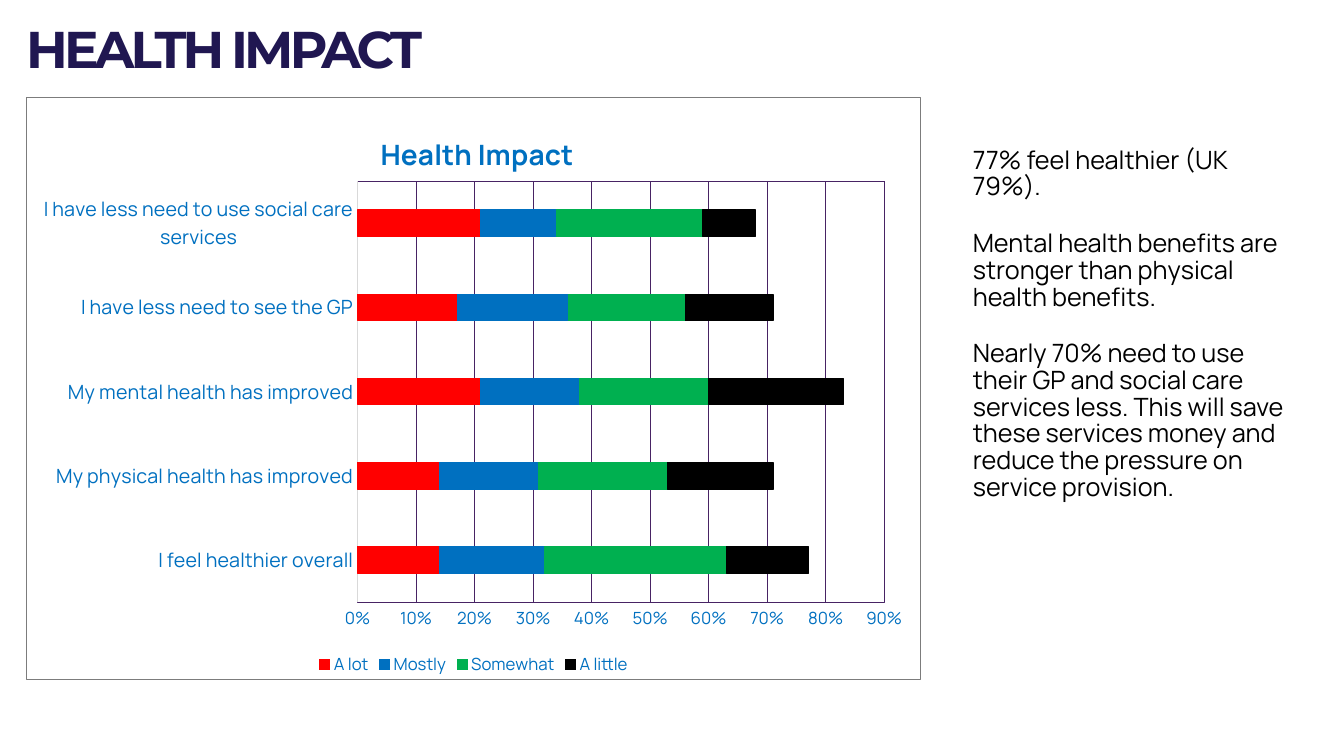
from lxml import etree
from pptx import Presentation, util as u
from pptx.chart.data import CategoryChartData
from pptx.dml.color import RGBColor
from pptx.enum import chart as kinds, text
from pptx.oxml import ns

HUES = {
    "title": "201751", "label": "0070C0", "body": "000000", "grid": "472364",
    "axis": "D9D9D9", "frame": "7C7C7C",
    "A lot": "FF0000", "Mostly": "0070C0", "Somewhat": "00B050", "A little": "000000",
}
CATS = [
    "I feel healthier overall", "My physical health has improved",
    "My mental health has improved", "I have less need to see the GP",
    "I have less need to use social care services",
]
DATA = {
    "A lot": [0.14, 0.14, 0.21, 0.17, 0.21],
    "Mostly": [0.18, 0.17, 0.17, 0.19, 0.13],
    "Somewhat": [0.31, 0.22, 0.22, 0.2, 0.25],
    "A little": [0.14, 0.18, 0.23, 0.15, 0.09],
}
NOTES = [
    "77% feel healthier (UK 79%).",
    "Mental health benefits are stronger than physical health benefits.",
    "Nearly 70% need to use their GP and social care services less. "
    "This will save these services money and reduce the pressure on service provision.",
]


def apply(item, **vals):
    for key, val in vals.items():
        setattr(item, key, val)


def style(font, size, hue, name="Manrope", bold=False):
    apply(font, size=u.Pt(size), name=name, bold=bold)
    font.color.rgb = RGBColor.from_string(HUES[hue])


def stroke(line, hue):
    line.color.rgb = RGBColor.from_string(HUES[hue])
    line.width = u.Pt(0.75)


def layout(node, index, **spots):
    for old in node.findall(ns.qn("c:layout")):
        node.remove(old)
    outer = etree.Element(ns.qn("c:layout"))
    inner = etree.SubElement(outer, ns.qn("c:manualLayout"))
    if "w" in spots:
        etree.SubElement(inner, ns.qn("c:layoutTarget"), val="inner")
    for axis in "xy":
        etree.SubElement(inner, ns.qn(f"c:{axis}Mode"), val="edge")
    for key, val in spots.items():
        etree.SubElement(inner, ns.qn(f"c:{key}"), val=str(val))
    node.insert(index, outer)


def border(hue):
    props = etree.Element(ns.qn("c:spPr"))
    etree.SubElement(props, ns.qn("a:noFill"))
    line = etree.SubElement(props, ns.qn("a:ln"), w=str(u.Pt(0.75)))
    fill = etree.SubElement(line, ns.qn("a:solidFill"))
    etree.SubElement(fill, ns.qn("a:srgbClr"), val=HUES[hue])
    return props


def add_box(slide, box, **margins):
    frame = slide.shapes.add_textbox(*map(u.Inches, box)).text_frame
    apply(frame, word_wrap=True, vertical_anchor=text.MSO_ANCHOR.TOP, **margins)
    return frame


def add_title(slide, box):
    sides = ("left", "top", "right", "bottom")
    frame = add_box(slide, box, **{f"margin_{side}": 0 for side in sides})
    para = frame.paragraphs[0]
    para.line_spacing = u.Pt(32.3)
    run = para.add_run()
    run.text = "HEALTH IMPACT"
    style(run.font, 36.9, "title", "Montserrat", True)
    run.font._element.set("spc", "-280")


def add_notes(slide, box):
    frame = add_box(slide, box)
    for i, note in enumerate(NOTES):
        para = frame.add_paragraph() if i else frame.paragraphs[0]
        para.line_spacing = 0.88
        if i:
            para.space_before = u.Pt(21.6)
        run = para.add_run()
        run.text = note
        style(run.font, 18, "body")


def add_bars(slide, box):
    data = CategoryChartData(number_format="0%")
    data.categories = CATS
    for name, vals in DATA.items():
        data.add_series(name, vals)
    chart = slide.shapes.add_chart(
        kinds.XL_CHART_TYPE.BAR_STACKED, *map(u.Inches, box), data).chart
    style(chart.font, 10, "label", "Calibri")

    chart.has_title = True
    head = chart.chart_title
    run = head.text_frame.paragraphs[0].add_run()
    run.text = "Health Impact"
    style(run.font, 20, "label", bold=True)
    layout(head._element, 1, x=0.39, y=0.05)

    chart.has_legend = True
    apply(chart.legend, position=kinds.XL_LEGEND_POSITION.BOTTOM, include_in_layout=False)
    style(chart.legend.font, 12, "label")

    none = kinds.XL_TICK_MARK.NONE
    cat, val = chart.category_axis, chart.value_axis
    for axis, size in ((cat, 14), (val, 12)):
        apply(axis, major_tick_mark=none, minor_tick_mark=none)
        style(axis.tick_labels.font, size, "label")
    stroke(cat.format.line, "axis")
    val.format.line.fill.background()
    apply(val, minimum_scale=0, maximum_scale=0.9, major_unit=0.1, has_major_gridlines=True)
    apply(val.tick_labels, number_format="0%", number_format_is_linked=False)
    stroke(val.major_gridlines.format.line, "grid")

    plot = chart.plots[0]
    apply(plot, gap_width=219, overlap=100, vary_by_categories=False)
    for bar in plot.series:
        bar.format.fill.solid()
        bar.format.fill.fore_color.rgb = RGBColor.from_string(HUES[bar.name])
        stroke(bar.format.line, bar.name)

    root = chart._chartSpace
    body = root.find(ns.qn("c:chart"))
    area = body.find(ns.qn("c:plotArea"))
    layout(area, 0, x=0.37, y=0.144, w=0.589, h=0.723)
    area.append(border("grid"))
    body.addnext(border("frame"))


def main():
    deck = Presentation()
    apply(deck, slide_width=u.Inches(13.33), slide_height=u.Inches(7.5))
    slide = deck.slides.add_slide(deck.slide_layouts[6])
    add_title(slide, (0.26, 0.33, 9.12, 0.99))
    add_bars(slide, (0.26, 0.96, 8.88, 5.79))
    add_notes(slide, (9.55, 1.42, 3.38, 4.34))
    deck.save("out.pptx")


if __name__ == "__main__":
    main()
